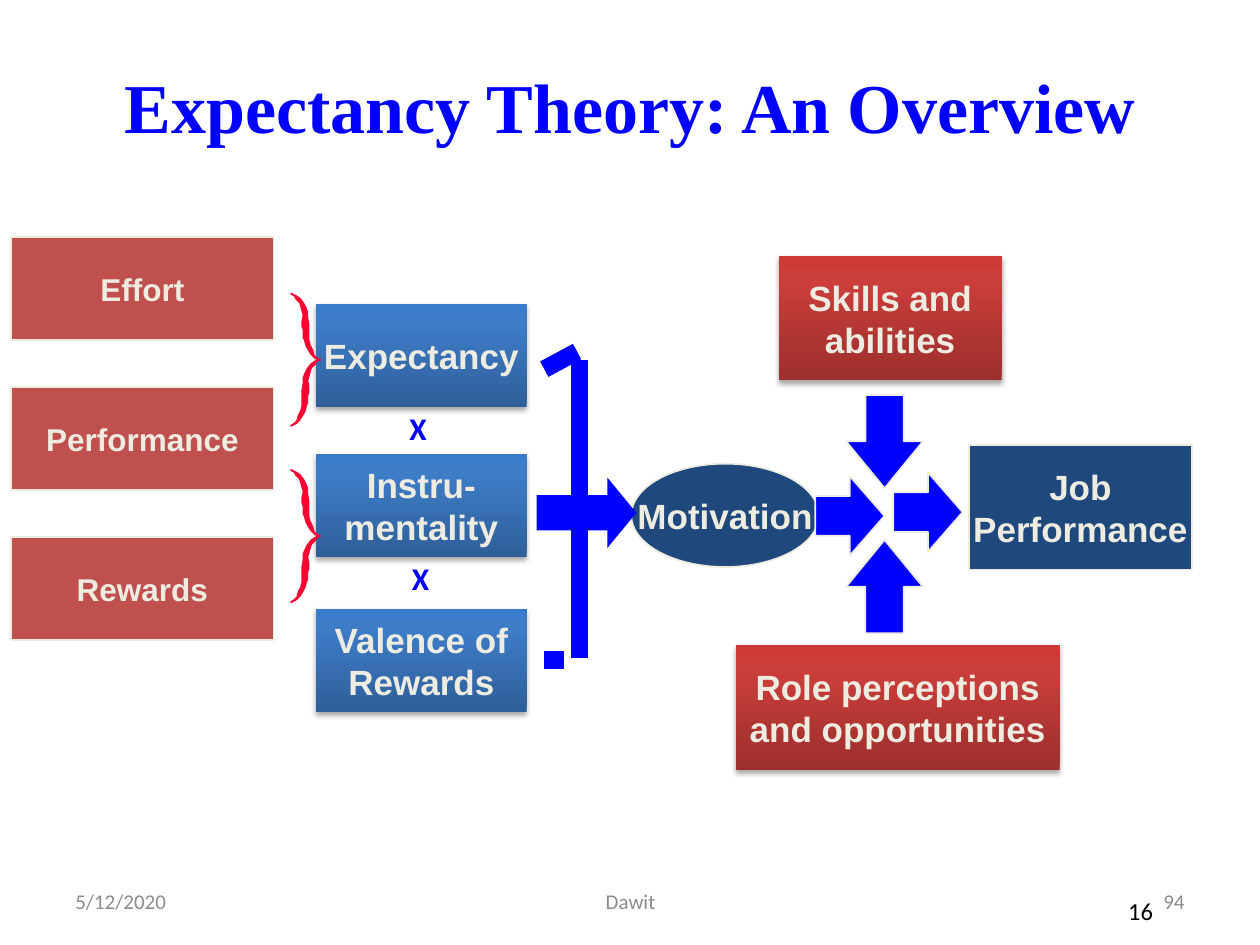
from copy import deepcopy

from lxml import etree
from pptx import Presentation
from pptx.dml.color import RGBColor
from pptx.enum.shapes import MSO_CONNECTOR, MSO_SHAPE
from pptx.enum.text import MSO_ANCHOR, MSO_AUTO_SIZE, PP_ALIGN
from pptx.oxml.ns import qn
from pptx.util import Inches, Pt

RECTANGLE, OVAL, ARROW = MSO_SHAPE.RECTANGLE, MSO_SHAPE.OVAL, MSO_SHAPE.RIGHT_ARROW
STRAIGHT = MSO_CONNECTOR.STRAIGHT
LEFT, CENTER, RIGHT = PP_ALIGN.LEFT, PP_ALIGN.CENTER, PP_ALIGN.RIGHT
TOP, MIDDLE = MSO_ANCHOR.TOP, MSO_ANCHOR.MIDDLE
FIT_SHAPE = MSO_AUTO_SIZE.SHAPE_TO_FIT_TEXT

BLUE, NAVY, CREAM = "0000FF", "1F497D", "EEECE1"
BRICK, BRACE_RED, GRAY = "C0504D", "FF0033", "8C8C8C"
BLUE_GRADIENT = [(0, "2F5F99"), (0.8, "3D7CC7"), (1, "3A7CCB")]
RED_GRADIENT = [(0, "9C2F2D"), (0.8, "CB3E3A"), (1, "CE3B37")]

# Upper half of a brace, in inches from its top left corner
BRACE_WIDTH, BRACE_HALF = 0.23, 0.52
BRACE_POINTS = [
    (0, 0), (0.04, 0.02), (0.07, 0.04), (0.1, 0.08), (0.12, 0.12), (0.13, 0.15),
    (0.13, 0.19), (0.14, 0.25), (0.14, 0.37), (0.15, 0.41), (0.17, 0.45),
    (0.18, 0.49), (0.2, 0.51), (0.23, 0.53), (0.19, 0.51), (0.16, 0.48),
    (0.13, 0.43), (0.12, 0.41), (0.11, 0.37), (0.1, 0.35), (0.1, 0.29),
    (0.09, 0.26), (0.09, 0.22), (0.1, 0.17), (0.09, 0.14), (0.08, 0.1),
    (0.07, 0.07), (0.04, 0.04), (0.03, 0.02),
]


def color(value):
    return RGBColor.from_string(value)


def write_text(shape, text, size, font, value, bold=False, align=CENTER,
               anchor=MIDDLE, wrap=False):
    frame = shape.text_frame
    frame.word_wrap = wrap
    frame.vertical_anchor = anchor
    frame.text = text
    for paragraph in frame.paragraphs:
        paragraph.alignment = align
        paragraph.font.size = Pt(size)
        paragraph.font.name = font
        paragraph.font.bold = bold
        paragraph.font.color.rgb = color(value)


def add_label(slide, box, text, size, font, value, **options):
    shape = slide.shapes.add_textbox(*map(Inches, box))
    write_text(shape, text, size, font, value, **options)
    return shape


def add_shape(slide, kind, box, fill, line=None):
    shape = slide.shapes.add_shape(kind, *map(Inches, box))
    shape.shadow.inherit = False
    shape.fill.solid()
    shape.fill.fore_color.rgb = color(fill)
    if line:
        shape.line.color.rgb = color(line)
        shape.line.width = Pt(1)
    else:
        shape.line.fill.background()
    return shape


def add_box(slide, box, text, fill, size=20, kind=RECTANGLE):
    shape = add_shape(slide, kind, box, fill, CREAM)
    write_text(shape, text, size, "Arial", CREAM, bold=True)


def add_gradient_box(slide, box, text, stops):
    shape = add_shape(slide, RECTANGLE, box, stops[0][1])
    properties = shape.element.spPr

    # Three stops, running from bottom to top
    shape.fill.gradient()
    shape.fill.gradient_angle = 90
    stop_list = properties.find(".//" + qn("a:gsLst"))
    stop_list.append(deepcopy(stop_list[-1]))
    for stop, (position, value) in zip(shape.fill.gradient_stops, stops):
        stop.position = position
        stop.color.rgb = color(value)

    # Soft shadow below the box
    shadow = etree.SubElement(
        properties.find(qn("a:effectLst")), qn("a:outerShdw"),
        blurRad=str(Pt(3.1)), dist=str(Pt(1.8)), dir="5400000", rotWithShape="0")
    shade = etree.SubElement(shadow, qn("a:srgbClr"), val="000000")
    etree.SubElement(shade, qn("a:alpha"), val="35000")

    write_text(shape, text, 20, "Arial", CREAM, bold=True)


def add_arrow(slide, box, head, rotation=0, line=CREAM):
    shape = add_shape(slide, ARROW, box, BLUE, line)
    shape.adjustments[0] = 0.5
    shape.adjustments[1] = head
    shape.rotation = rotation


def add_bar(slide, *ends):
    connector = slide.shapes.add_connector(STRAIGHT, *map(Inches, ends))
    connector.line.color.rgb = color(BLUE)
    connector.line.width = Pt(10)
    etree.SubElement(connector.element.spPr, qn("a:effectLst"))


def add_brace(slide, left, top):
    group = slide.shapes.add_group_shape()
    mirrored = [(BRACE_WIDTH - x, y + BRACE_HALF) for x, y in BRACE_POINTS]
    for half in (BRACE_POINTS, mirrored):
        points = [(Inches(left + x), Inches(top + y)) for x, y in half]
        builder = group.shapes.build_freeform(*points[0], scale=1.0)
        builder.add_line_segments(points[1:], close=True)
        shape = builder.convert_to_shape()
        shape.shadow.inherit = False
        shape.fill.solid()
        shape.fill.fore_color.rgb = color(BRACE_RED)
        shape.line.color.rgb = color(BRACE_RED)
        shape.line.width = Pt(1)


def main():
    presentation = Presentation()
    presentation.slide_width = Inches(10)
    presentation.slide_height = Inches(7.5)
    slide = presentation.slides.add_slide(presentation.slide_layouts[6])

    # Title
    add_label(slide, (0.75, 0.42, 8.5, 0.83), "Expectancy Theory: An Overview",
              40, "Times New Roman", BLUE, bold=True, wrap=True)

    # Causes on the left
    for row, text in enumerate(["Effort", "Performance", "Rewards"]):
        add_box(slide, (0.09, 1.88 + 1.19 * row, 2.08, 0.82), text, BRICK, 18)

    # Three factors of motivation
    factors = [(2.41, "Expectancy"), (3.6, "Instru-\nmentality"),
               (4.83, "Valence of\nRewards")]
    for top, text in factors:
        add_gradient_box(slide, (2.51, top, 1.67, 0.82), text, BLUE_GRADIENT)

    # Bracket that joins the factors
    add_bar(slide, 4.32, 2.93, 4.58, 2.79)
    add_bar(slide, 4.32, 5.24, 4.48, 5.24)
    add_bar(slide, 4.6, 2.86, 4.6, 5.22)

    # Motivation, its conditions and the outcome
    add_gradient_box(slide, (6.18, 2.03, 1.77, 0.99), "Skills and\nabilities",
                     RED_GRADIENT)
    add_box(slide, (7.69, 3.53, 1.77, 0.99), "Job\nPerformance", NAVY)
    add_gradient_box(slide, (5.84, 5.12, 2.57, 0.99),
                     "Role perceptions\nand opportunities", RED_GRADIENT)
    add_box(slide, (5.01, 3.68, 1.49, 0.82), "Motivation", NAVY, kind=OVAL)

    # Block arrows
    add_arrow(slide, (6.65, 3.2, 0.74, 0.61), 0.61, rotation=90)
    add_arrow(slide, (6.65, 4.35, 0.74, 0.61), 0.61, rotation=270)
    add_arrow(slide, (6.47, 3.78, 0.55, 0.63), 0.5)
    add_arrow(slide, (7.09, 3.75, 0.55, 0.63), 0.5)
    add_arrow(slide, (4.26, 3.79, 0.79, 0.56), 0.41, line=None)

    # Multiplication signs between the factors
    for left, top in [(3.15, 3.2), (3.17, 4.39)]:
        sign = add_label(slide, (left, top, 0.45, 0.51), "X", 18, "Calibri", BLUE,
                         bold=True, align=LEFT, anchor=TOP)
        sign.text_frame.auto_size = FIT_SHAPE

    # Braces from causes to factors
    for top in (2.33, 3.73):
        add_brace(slide, 2.31, top)

    # Footer
    add_label(slide, (7.17, 6.98, 2.08, 0.5), "16", 14, "Calibri", "000000",
              align=RIGHT)
    footers = [(0.5, 2.33, "5/12/2020", LEFT), (3.42, 3.17, "Dawit", CENTER),
               (7.17, 2.33, "94", RIGHT)]
    for left, width, text, align in footers:
        add_label(slide, (left, 6.95, width, 0.4), text, 12, "Calibri", GRAY,
                  align=align, wrap=True)

    presentation.save("out.pptx")


if __name__ == "__main__":
    main()
